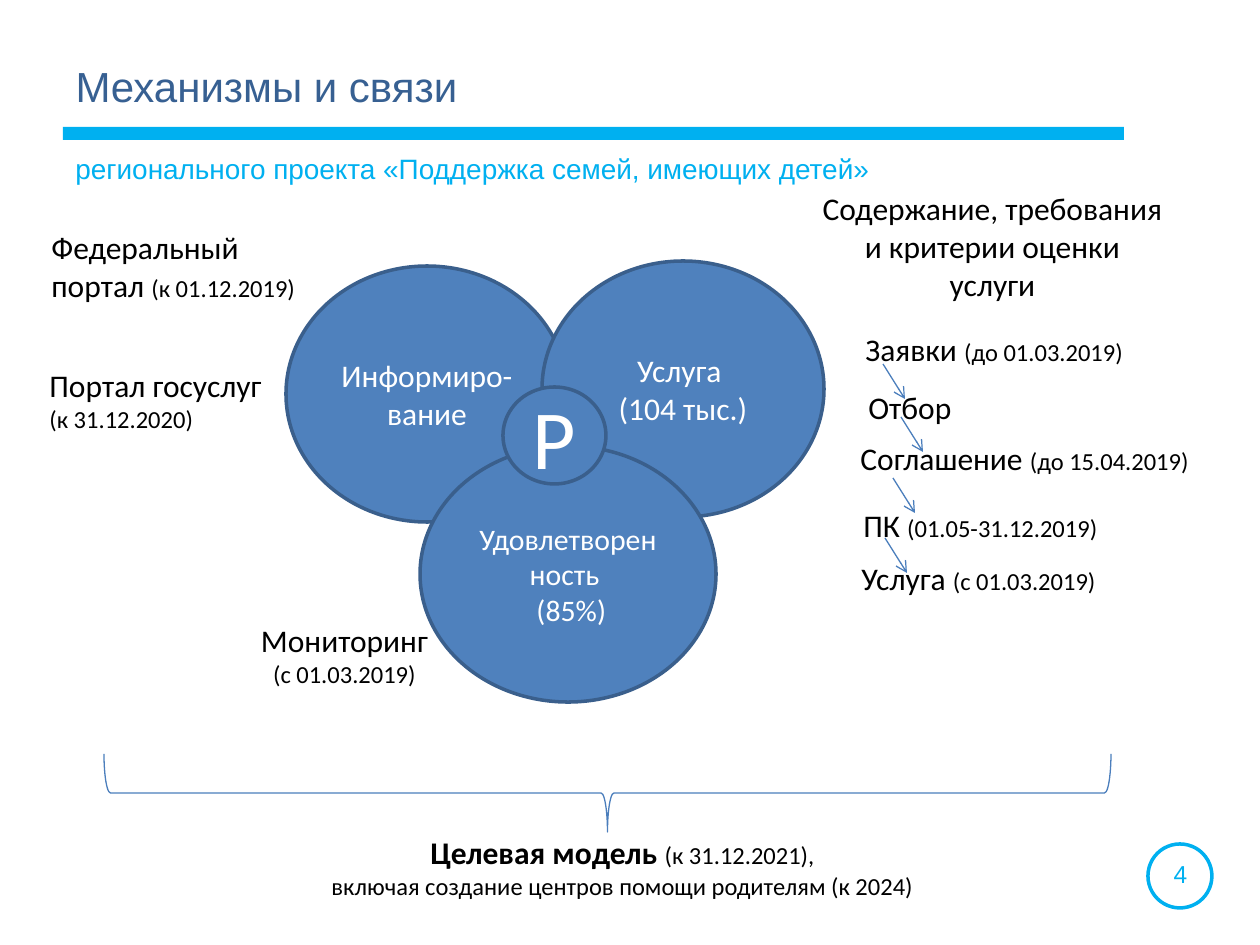
from pptx import Presentation, util as u
from pptx.dml.color import RGBColor
from pptx.enum import shapes as sh, text as tx
from pptx.oxml.ns import qn
from lxml import etree

HUE = {"sky": "00B0F0", "navy": "376092", "blue": "4F81BD", "rim": "3A5F8C",
       "wire": "4B7EBC", "ink": "000000", "white": "FFFFFF"}
MID = tx.PP_ALIGN.CENTER
LEFT = tx.PP_ALIGN.LEFT


def px(*nums):
    """Turn pixels into EMU."""
    return [u.Emu(round(n * 914400 / 126)) for n in nums]


def rgb(name):
    """Look up a named colour."""
    return RGBColor.from_string(HUE[name])


def write(frame, paras, hue="ink", align=LEFT, font="Calibri"):
    """Fill a frame with paragraphs of (text, size, bold) runs."""
    frame.word_wrap = True
    for i, runs in enumerate(paras):
        para = frame.add_paragraph() if i else frame.paragraphs[0]
        para.alignment = align
        for words, size, *bold in runs:
            run = para.add_run()
            run.text = words
            run.font.size = u.Pt(size)
            run.font.name = font
            run.font.bold = bool(bold)
            run.font.color.rgb = rgb(hue)


def label(slide, box, paras, **look):
    """Add a text box."""
    write(slide.shapes.add_textbox(*px(*box)).text_frame, paras, **look)


def form(slide, kind, box, fill=None, line=None, width=2):
    """Add a flat preset shape."""
    item = slide.shapes.add_shape(kind, *px(*box))
    item.shadow.inherit = False
    if fill:
        item.fill.solid()
        item.fill.fore_color.rgb = rgb(fill)
    else:
        item.fill.background()
    if line:
        item.line.color.rgb = rgb(line)
        item.line.width = u.Pt(width)
    else:
        item.line.fill.background()
    return item


def arrow(slide, x, y):
    """Add a short slanting arrow."""
    link = slide.shapes.add_connector(
        sh.MSO_CONNECTOR.STRAIGHT, *px(x, y, x + 22, y + 35))
    link.line.color.rgb = rgb("wire")
    link.line.width = u.Pt(0.75)
    props = link._element.spPr
    etree.SubElement(props.get_or_add_ln(), qn("a:tailEnd"), type="arrow")
    etree.SubElement(props, qn("a:effectLst"))


def header(slide, x, y):
    """Place the title, bar and subtitle."""
    title = slide.shapes.title
    title.left, title.top, title.width, title.height = px(x, y, 982, 81)
    frame = title.text_frame
    frame.auto_size = tx.MSO_AUTO_SIZE.NONE
    frame.vertical_anchor = tx.MSO_ANCHOR.TOP
    write(frame, [[("Механизмы и связи", 24)]], hue="navy", font="Arial")
    form(slide, sh.MSO_SHAPE.RECTANGLE, (x, y + 73, 1061, 13), "sky")
    label(slide, (x, y + 91, 1079, 62),
          [[("регионального проекта «Поддержка семей, имеющих детей»", 16)]],
          hue="sky", font="Arial")


def badge(slide, x, y):
    """Place the ringed page number."""
    form(slide, sh.MSO_SHAPE.OVAL, (x, y, 64, 64), line="sky")
    label(slide, (x - 4, y + 9, 73, 43), [[("4", 14)]],
          hue="sky", align=MID, font="Arial")


def venn(slide, x, y):
    """Place the overlapping ovals."""
    ovals = [(0, 5, 282, 256, 18, ["Информиро-вание"]),
             (256, 0, 282, 256, 18, ["Услуга ", "(104 тыс.)"]),
             (134, 185, 296, 256, 17, ["Удовлетворенность ", " (85%)"]),
             (217, 126, 103, 97, 48, ["Р"])]
    for dx, dy, w, h, size, rows in ovals:
        oval = form(slide, sh.MSO_SHAPE.OVAL, (x + dx, y + dy, w, h),
                    "blue", "rim")
        oval.text_frame.vertical_anchor = tx.MSO_ANCHOR.MIDDLE
        write(oval.text_frame, [[(row, size)] for row in rows],
              hue="white", align=MID)


def portals(slide, x, y):
    """Place the labels beside the ovals."""
    label(slide, (x + 2, y, 312, 89),
          [[("Федеральный портал ", 18), ("(к 01.12.2019)", 14)]])
    label(slide, (x, y + 138, 243, 118),
          [[("Портал госуслуг ", 18), ("(к 31.12.2020)", 14)]])
    label(slide, (x + 186, y + 393, 243, 118),
          [[("Мониторинг", 18)], [("(с 01.03.2019)", 14)]], align=MID)


def steps(slide, x, y):
    """Place the service heading and its chain of steps."""
    label(slide, (x, y, 365, 127),
          [[("Содержание, требования и критерии оценки услуги", 18)]],
          align=MID)
    chain = [(43, 141, "Заявки ", "(до 01.03.2019)"),
             (46, 199, "Отбор", ""),
             (38, 250, "Соглашение ", "(до 15.04.2019)"),
             (41, 317, "ПК ", "(01.05-31.12.2019)"),
             (39, 370, "Услуга ", "(с 01.03.2019)")]
    for dx, dy, name, date in chain:
        runs = [(name, 18)] + ([(date, 14)] if date else [])
        label(slide, (x + dx, y + dy, 412, 50), [runs])
    for dx, dy in [(73, 181), (91, 234), (83, 295), (75, 355)]:
        arrow(slide, x + dx, y + dy)


def model(slide, x, y, w, h):
    """Place the brace and the target model below it."""
    brace = form(slide, sh.MSO_SHAPE.RIGHT_BRACE,
                 (x + (w - h) / 2, y + (h - w) / 2, h, w),
                 line="wire", width=0.75)
    brace.rotation = 90
    label(slide, (x + 27, y + 73, 983, 118),
          [[("Целевая модель ", 18, True), ("(к 31.12.2021),", 14)],
           [("включая создание центров помощи родителям (к 2024)", 14)]],
          align=MID)


def main():
    """Build and save the slide."""
    deck = Presentation()
    deck.slide_width, deck.slide_height = px(1260, 945)
    slide = deck.slides.add_slide(deck.slide_layouts[5])
    header(slide, 63, 54)
    badge(slide, 1148, 844)
    venn(slide, 286, 261)
    portals(slide, 37, 222)
    model(slide, 104, 754, 1007, 78)
    steps(slide, 810, 183)
    deck.save("out.pptx")


if __name__ == "__main__":
    main()
